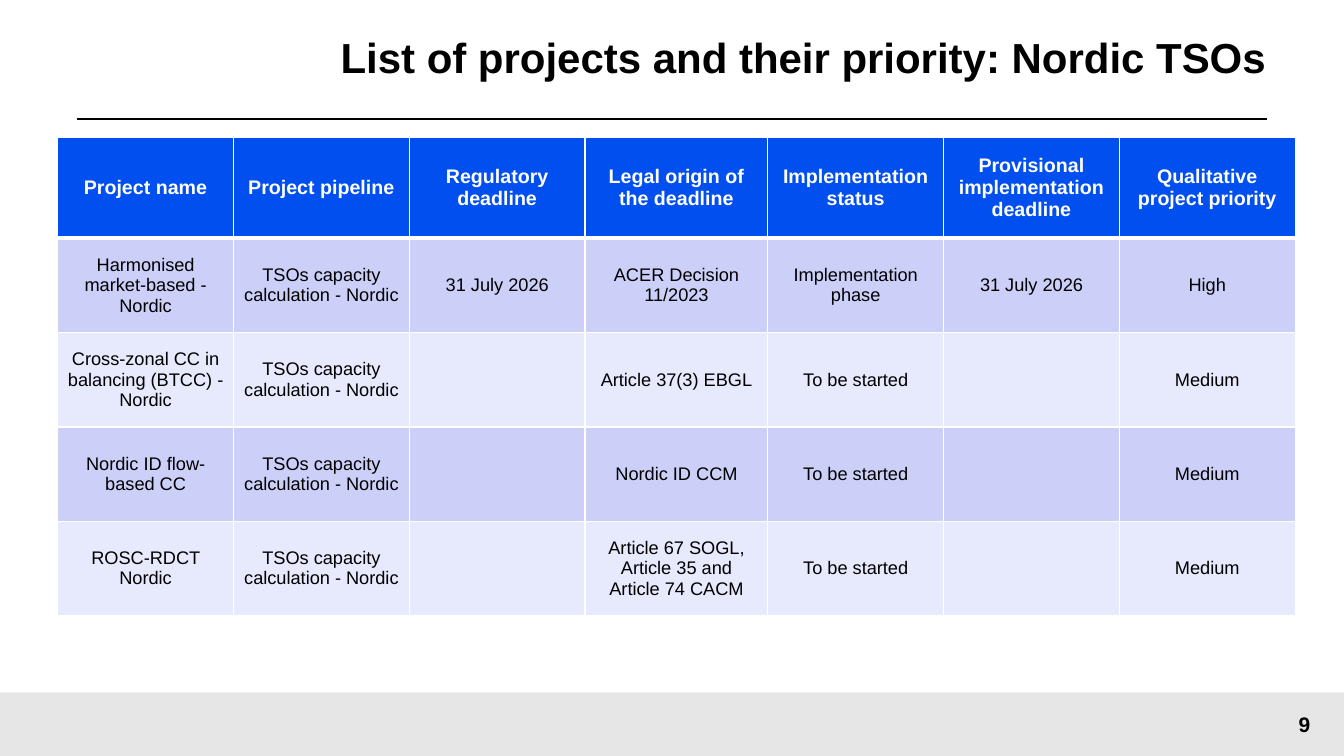
import pptx
import pptx.util
import pptx.dml.color
import pptx.enum.text
import pptx.enum.shapes
import pptx.oxml
import pptx.oxml.ns
from lxml import etree

Pt = pptx.util.Pt
RGB = pptx.dml.color.RGBColor
ALIGN = pptx.enum.text.PP_ALIGN
MIDDLE = pptx.enum.text.MSO_ANCHOR.MIDDLE
SHAPE = pptx.enum.shapes.MSO_SHAPE

BLACK = RGB(0x00, 0x00, 0x00)
WHITE = RGB(0xFF, 0xFF, 0xFF)
GREY = RGB(0xE6, 0xE6, 0xE6)
BLUE = RGB(0x00, 0x4F, 0xEE)
BANDS = [RGB(0xE7, 0xE9, 0xFC), RGB(0xCC, 0xD0, 0xF8)]

TITLE = "List of projects and their priority: Nordic TSOs"
PAGE = "9"
PIPE = "TSOs capacity calculation - Nordic"
TODO = "To be started"
ROWS = [
    ("Project name", "Project pipeline", "Regulatory deadline",
     "Legal origin of the deadline", "Implementation status",
     "Provisional implementation deadline", "Qualitative project priority"),
    ("Harmonised market-based - Nordic", PIPE, "31 July 2026",
     "ACER Decision 11/2023", "Implementation phase", "31 July 2026", "High"),
    ("Cross-zonal CC in balancing (BTCC) - Nordic", PIPE, "",
     "Article 37(3) EBGL", TODO, "", "Medium"),
    ("Nordic ID flow-based CC", PIPE, "", "Nordic ID CCM", TODO, "", "Medium"),
    ("ROSC-RDCT Nordic", PIPE, "",
     "Article 67 SOGL, Article 35 and Article 74 CACM", TODO, "", "Medium"),
]
WIDTHS = [125.6] * 3 + [130.5] + [125.6] * 3
HEIGHTS = [72] + [67.4] * 4
WIDE, HIGH = 960, 540
BAR = 494.6
RULE = 85


def write(frame, text, size, color, bold, align):
    para = frame.paragraphs[0]
    para.alignment = align
    if text:
        run = para.add_run()
        run.text = text
        font = run.font
        font.name = "Arial"
        font.size = Pt(size)
        font.bold = bold
        font.color.rgb = color
    return para


def edge(cell, side, width):
    props = cell._tc.get_or_add_tcPr()
    line = etree.SubElement(props, pptx.oxml.ns.qn("a:ln" + side), w=str(Pt(width)))
    fill = etree.SubElement(line, pptx.oxml.ns.qn("a:solidFill"))
    etree.SubElement(fill, pptx.oxml.ns.qn("a:srgbClr"), val=str(WHITE))


def place(shape, left, top, width, height):
    shape.left, shape.top = Pt(left), Pt(top)
    shape.width, shape.height = Pt(width), Pt(height)


def frame_up(slide):
    bar = slide.shapes.add_shape(SHAPE.RECTANGLE, 0, Pt(BAR), Pt(WIDE), Pt(HIGH - BAR))
    bar.shadow.inherit = False
    bar.fill.solid()
    bar.fill.fore_color.rgb = GREY
    bar.line.fill.background()

    rule = slide.shapes.add_connector(
        pptx.enum.shapes.MSO_CONNECTOR.STRAIGHT, Pt(55), Pt(RULE), Pt(905), Pt(RULE))
    rule.line.color.rgb = BLACK
    rule.line.width = Pt(1.5)
    etree.SubElement(rule._element.spPr, pptx.oxml.ns.qn("a:effectLst"))

    title = slide.shapes.title
    place(title, 219, 0, 686, RULE)
    frame = title.text_frame
    frame.word_wrap = True
    frame.auto_size = pptx.enum.text.MSO_AUTO_SIZE.NONE
    frame.vertical_anchor = MIDDLE
    frame.margin_left = frame.margin_right = 0
    frame.margin_top = frame.margin_bottom = Pt(14.4)
    write(frame, TITLE, 30, BLACK, True, ALIGN.RIGHT).line_spacing = 0.9

    page = slide.shapes.add_textbox(Pt(903.4), Pt(BAR), Pt(56.6), Pt(HIGH - BAR))
    page.text_frame.word_wrap = True
    page.text_frame.vertical_anchor = MIDDLE
    write(page.text_frame, PAGE, 15, BLACK, True, ALIGN.CENTER)


def add_grid(slide):
    table = slide.shapes.add_table(
        len(ROWS), len(WIDTHS), Pt(41.2), Pt(98.2),
        Pt(sum(WIDTHS)), Pt(sum(HEIGHTS))).table
    for col, width in zip(table.columns, WIDTHS):
        col.width = Pt(width)
    for r, texts in enumerate(ROWS):
        table.rows[r].height = Pt(HEIGHTS[r])
        head = r == 0
        for c, text in enumerate(texts):
            cell = table.cell(r, c)
            cell.vertical_anchor = MIDDLE
            cell.margin_left = cell.margin_right = Pt(7)
            for side, width in (("L", 1), ("R", 1), ("T", 3 if r == 1 else 1),
                                ("B", 3 if head else 1)):
                edge(cell, side, width)
            cell.fill.solid()
            cell.fill.fore_color.rgb = BLUE if head else BANDS[r % 2]
            write(cell.text_frame, text, 14 if head else 13,
                  WHITE if head else BLACK, head, ALIGN.CENTER)


def main():
    deck = pptx.Presentation()
    deck.slide_width, deck.slide_height = Pt(WIDE), Pt(HIGH)
    slide = deck.slides.add_slide(deck.slide_layouts[5])
    frame_up(slide)
    add_grid(slide)
    deck.save("out.pptx")


if __name__ == "__main__":
    main()
